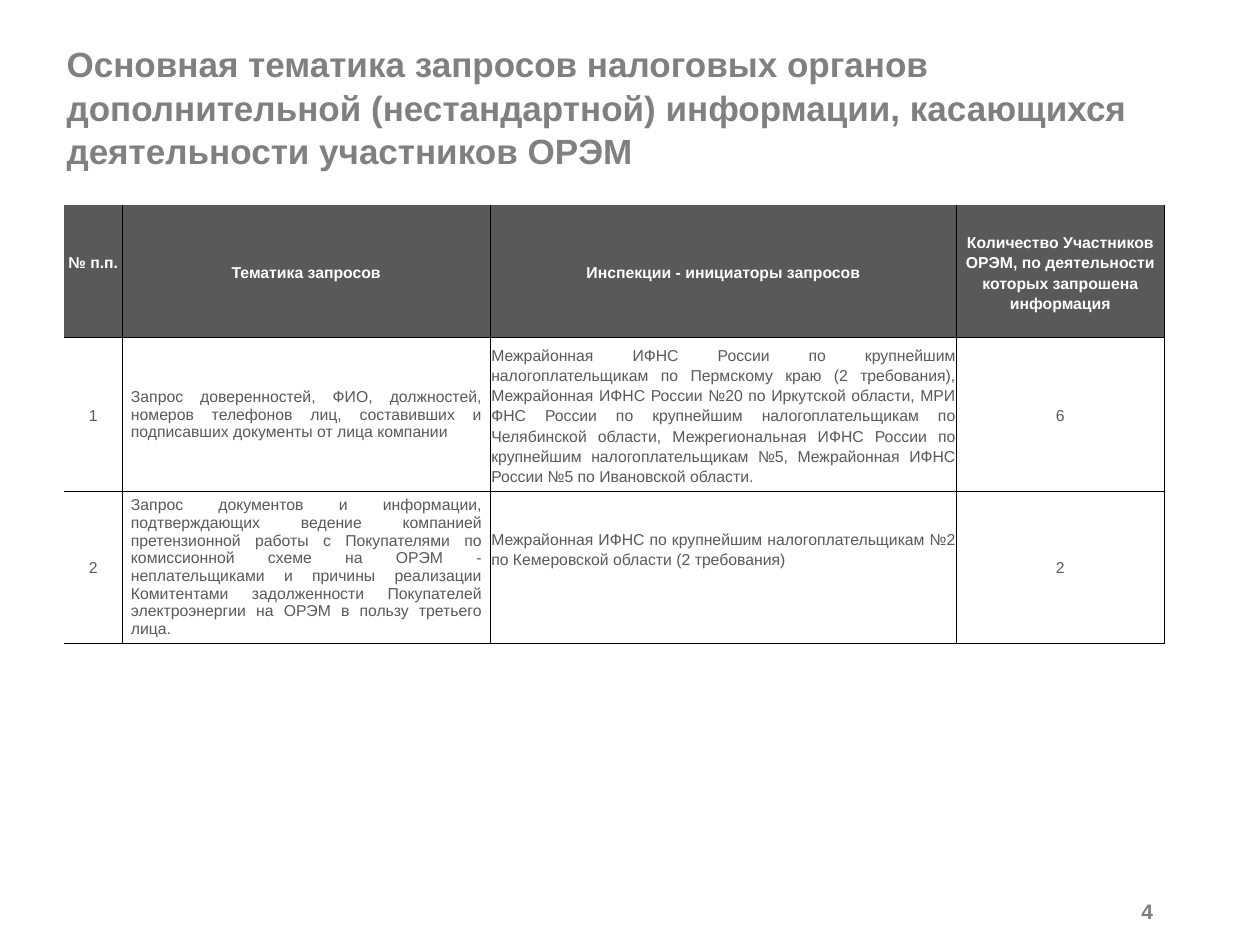
"""Build the slide on the topics of tax authority requests."""
from dataclasses import dataclass
from typing import Any

from lxml.etree import SubElement as Sub
from pptx import Presentation
from pptx.dml.color import RGBColor
from pptx.enum.text import MSO_ANCHOR as Anchor, PP_ALIGN as Align
from pptx.oxml.ns import qn
from pptx.util import Inches, Pt

GREY = RGBColor(0x80, 0x80, 0x80)
PAGE = RGBColor(0x7F, 0x7F, 0x7F)
DARK = RGBColor(0x59, 0x59, 0x59)
WHITE = RGBColor(0xFF, 0xFF, 0xFF)
BLACK = RGBColor(0, 0, 0)

COLS = (0.46, 2.92, 3.7, 1.65)
ROWS = (1.05, 1.14, 1.12)


@dataclass
class Label:
    text: str
    box: tuple[float, float, float, float]
    size: int
    color: RGBColor
    align: Align = Align.LEFT
    gap: float = 1.0


@dataclass
class Entry:
    text: str
    align: Align = Align.CENTER
    gap: float = 1.15
    side: float = 0.07
    top: float = 0
    foot: float = 0
    head: bool = False


def head(text: str, gap: float = 1.15, foot: float = 0) -> Entry:
    return Entry(text, gap=gap, side=0.01, top=0.01, foot=foot, head=True)


def topic(text: str) -> Entry:
    return Entry(text, Align.JUSTIFY, 1.0)


def office(text: str, foot: float = 0) -> Entry:
    return Entry(text, Align.JUSTIFY, side=0.01, top=0.01, foot=foot)


LABELS = (
    Label("Основная тематика запросов налоговых органов дополнительной "
          "(нестандартной) информации, касающихся деятельности участников ОРЭМ",
          (0.43, 0.3, 8.82, 1.09), 20, GREY, gap=1.04),
    Label("4", (8.15, 7.06, 1.1, 0.34), 12, PAGE, Align.RIGHT),
)

GRID = (
    (head("№ п.п.", 1.0, 0.15),
     head("Тематика запросов"),
     head("Инспекции - инициаторы запросов"),
     head("Количество Участников ОРЭМ, по деятельности которых запрошена информация")),
    (Entry("1"),
     topic("Запрос доверенностей, ФИО, должностей, номеров телефонов лиц, "
           "составивших и подписавших документы от лица компании"),
     office("Межрайонная ИФНС России по крупнейшим налогоплательщикам по "
            "Пермскому краю (2 требования), Межрайонная ИФНС России №20 по "
            "Иркутской области, МРИ ФНС России по крупнейшим "
            "налогоплательщикам по Челябинской области, Межрегиональная ИФНС "
            "России по крупнейшим налогоплательщикам №5, Межрайонная ИФНС "
            "России №5 по Ивановской области."),
     Entry("6")),
    (Entry("2"),
     topic("Запрос документов и информации, подтверждающих ведение компанией "
           "претензионной работы с Покупателями по комиссионной схеме на ОРЭМ - "
           "неплательщиками и причины реализации Комитентами задолженности "
           "Покупателей электроэнергии на ОРЭМ в пользу третьего лица."),
     office("Межрайонная ИФНС по крупнейшим налогоплательщикам №2 по "
            "Кемеровской области (2 требования)", 0.3),
     Entry("2")),
)


def assign(item: Any, form: dict[str, Any]) -> None:
    for name, value in form.items():
        setattr(item, name, value)


def write(frame: Any, text: str, size: int, color: RGBColor, bold: bool,
          align: Align, gap: float) -> None:
    para = frame.paragraphs[0]
    assign(para, {"alignment": align, "line_spacing": gap})
    run = para.add_run()
    run.text = text
    assign(run.font, {"name": "Arial", "size": Pt(size), "bold": bold})
    run.font.color.rgb = color


def put_label(slide: Any, label: Label) -> None:
    frame = slide.shapes.add_textbox(*map(Inches, label.box)).text_frame
    assign(frame, {"word_wrap": True, "vertical_anchor": Anchor.MIDDLE})
    write(frame, label.text, label.size, label.color, True, label.align, label.gap)


def rule(cell: Any, edges: dict[str, bool]) -> None:
    for side, shown in edges.items():
        line = Sub(cell._tc.get_or_add_tcPr(), qn(f"a:ln{side}"), w=str(Pt(0.5)))
        if shown:
            fill = Sub(line, qn("a:solidFill"))
            Sub(fill, qn("a:srgbClr"), val=str(BLACK))
        else:
            Sub(line, qn("a:noFill"))


def put_cell(cell: Any, entry: Entry, row: int, col: int) -> None:
    assign(cell, {
        "vertical_anchor": Anchor.MIDDLE,
        "margin_left": Inches(entry.side),
        "margin_right": Inches(entry.side),
        "margin_top": Inches(entry.top),
        "margin_bottom": Inches(entry.foot),
    })
    rule(cell, {"L": col > 0, "R": True, "T": row > 0, "B": True})
    cell.fill.solid()
    cell.fill.fore_color.rgb = DARK if entry.head else WHITE
    write(cell.text_frame, entry.text, 9, WHITE if entry.head else DARK,
          entry.head, entry.align, entry.gap)


def put_table(slide: Any) -> None:
    box = map(Inches, (0.51, 1.63, sum(COLS), sum(ROWS)))
    table = slide.shapes.add_table(len(ROWS), len(COLS), *box).table
    assign(table, {"first_row": False, "horz_banding": False})
    for col, width in zip(table.columns, COLS):
        col.width = Inches(width)
    for row, height in zip(table.rows, ROWS):
        row.height = Inches(height)
    for r, line in enumerate(GRID):
        for c, entry in enumerate(line):
            put_cell(table.cell(r, c), entry, r, c)


def main() -> None:
    deck = Presentation()
    assign(deck, {"slide_width": Inches(10), "slide_height": Inches(7.5)})
    slide = deck.slides.add_slide(deck.slide_layouts[6])
    for label in LABELS:
        put_label(slide, label)
    put_table(slide)
    deck.save("out.pptx")


if __name__ == "__main__":
    main()
